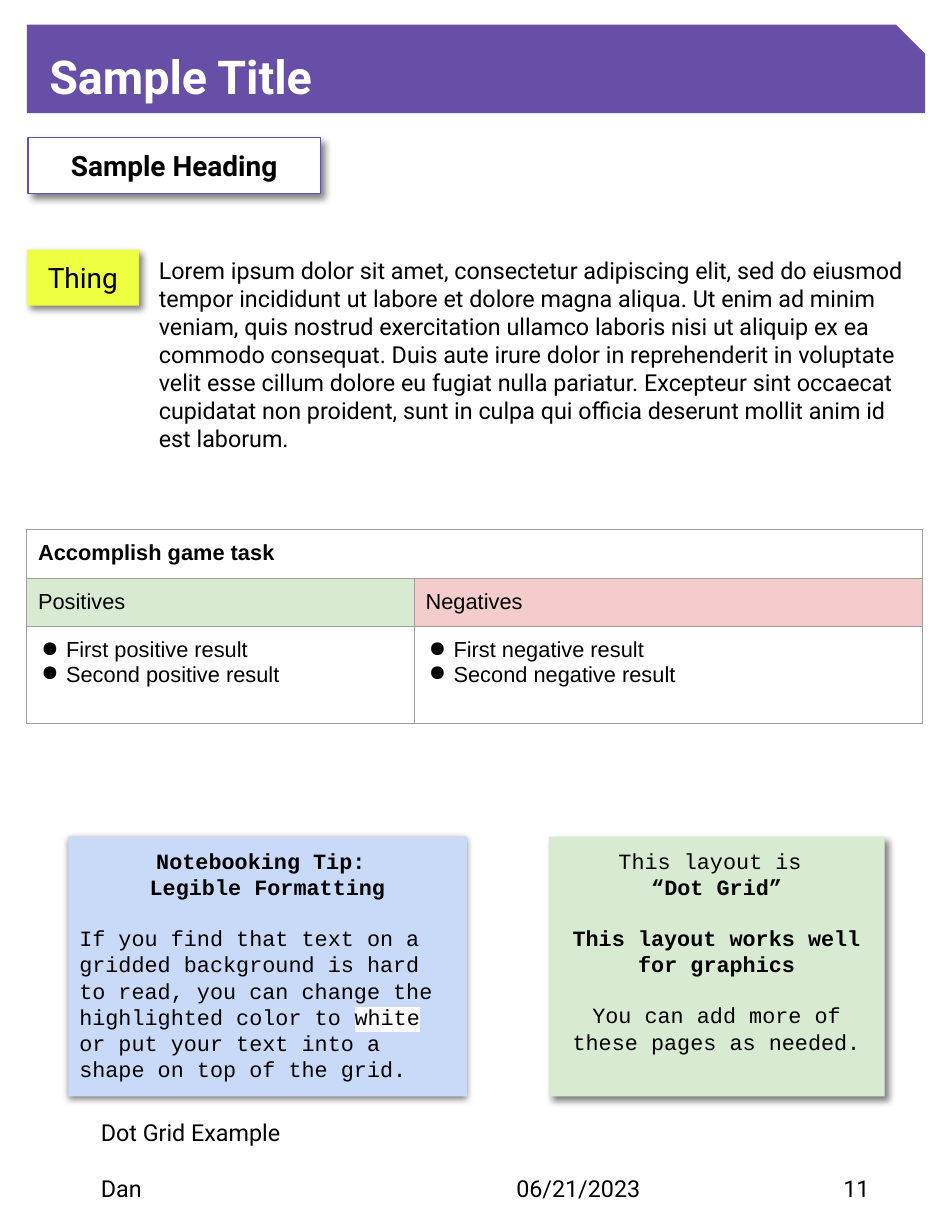
import pptx
import pptx.util
import pptx.dml.color
import pptx.enum.shapes
import pptx.enum.text
import pptx.oxml.ns
from lxml import etree

Inches, Pt = pptx.util.Inches, pptx.util.Pt
RGBColor = pptx.dml.color.RGBColor
SHAPE = pptx.enum.shapes.MSO_SHAPE
ALIGN = pptx.enum.text.PP_ALIGN
ANCHOR = pptx.enum.text.MSO_ANCHOR
qn = pptx.oxml.ns.qn

BLACK = RGBColor(0x00, 0x00, 0x00)
WHITE = RGBColor(0xFF, 0xFF, 0xFF)
PURPLE = RGBColor(0x67, 0x4E, 0xA7)
YELLOW = RGBColor(0xEE, 0xFF, 0x41)
GREEN = RGBColor(0xD9, 0xEA, 0xD3)
RED = RGBColor(0xF4, 0xCC, 0xCC)
BLUE = RGBColor(0xC9, 0xDA, 0xF8)
GRAY = RGBColor(0x9E, 0x9E, 0x9E)
LOREM = (
    "Lorem ipsum dolor sit amet, consectetur adipiscing elit, sed do eiusmod tempor "
    "incididunt ut labore et dolore magna aliqua. Ut enim ad minim veniam, quis nostrud "
    "exercitation ullamco laboris nisi ut aliquip ex ea commodo consequat. Duis aute irure "
    "dolor in reprehenderit in voluptate velit esse cillum dolore eu fugiat nulla pariatur. "
    "Excepteur sint occaecat cupidatat non proident, sunt in culpa qui officia deserunt "
    "mollit anim id est laborum."
)


def add_child(parent, tag, **attrs):
    return etree.SubElement(parent, qn(tag), {k: str(v) for k, v in attrs.items()})


def add_color(parent, color):
    add_child(parent, "a:srgbClr", val=color)


def add_run(p, text, font="Roboto", size=15, bold=False, color=BLACK, highlight=None):
    r = p.add_run()
    r.text = text
    r.font.size, r.font.bold, r.font.name = Pt(size), bold, font
    r.font.color.rgb = color
    if highlight is not None:
        mark = etree.Element(qn("a:highlight"))
        add_color(mark, highlight)
        r.font._element.find(qn("a:latin")).addprevious(mark)


class Page:
    """Holds the look of the page and draws each kind of element on it."""

    inset = 0.1
    bullet_indent, bullet_hang = 0.25, 0.22

    def __init__(self, slide):
        self.shapes = slide.shapes

    def fill_text(self, tf, paragraphs, insets, anchor=ANCHOR.TOP, **fmt):
        tf.word_wrap = True
        tf.vertical_anchor = anchor
        tf.margin_left, tf.margin_top, tf.margin_right, tf.margin_bottom = map(Inches, insets)
        for i, (runs, align, before) in enumerate(paragraphs):
            p = tf.add_paragraph() if i else tf.paragraphs[0]
            p.alignment = align
            if before:
                p.space_before = Pt(before)
            for text, extra in runs:
                add_run(p, text, **{**fmt, **extra})

    def text(self, box, text, inset=0, **fmt):
        sp = self.shapes.add_textbox(*map(Inches, box))
        self.fill_text(sp.text_frame, [([(text, {})], ALIGN.LEFT, 0)], [inset] * 4, **fmt)

    def shape(self, box, fill, paragraphs, kind=SHAPE.RECTANGLE, line=None, shadow=None,
              insets=(inset,) * 4, **fmt):
        sp = self.shapes.add_shape(kind, *map(Inches, box))
        sp.shadow.inherit = False
        sp.fill.solid()
        sp.fill.fore_color.rgb = fill
        if line is None:
            sp.line.fill.background()
        else:
            sp.line.color.rgb, sp.line.width = line, Pt(0.75)
        if shadow:
            self.cast_shadow(sp, *shadow)
        self.fill_text(sp.text_frame, paragraphs, insets, **fmt)
        return sp

    def cast_shadow(self, sp, distance, angle):
        effects = sp._element.spPr.find(qn("a:effectLst"))
        outer = add_child(effects, "a:outerShdw", blurRad=Pt(4.5), dist=Pt(distance),
                          dir=angle * 60000, algn="bl", rotWithShape=0)
        add_color(outer, BLACK)
        add_child(outer[0], "a:alpha", val=50000)

    def table(self, box, widths, heights, rows, fills):
        frame = self.shapes.add_table(len(rows), len(widths), *map(Inches, box))
        table = frame.table
        for col, width in zip(table.columns, widths):
            col.width = Inches(width)
        for row, height in zip(table.rows, heights):
            row.height = Inches(height)
        for i, row in enumerate(rows):
            for j, lines in enumerate(row):
                self.cell(table.cell(i, j), lines, fills[i][j], bold=i == 0, bulleted=i == 2)
        table.cell(0, 0).merge(table.cell(0, 1))

    def cell(self, cell, lines, fill, bold, bulleted):
        cell.margin_left = cell.margin_right = Inches(self.inset)
        cell.margin_top = cell.margin_bottom = Inches(self.inset)
        tcPr = cell._tc.get_or_add_tcPr()
        for side in ("a:lnL", "a:lnR", "a:lnT", "a:lnB"):
            add_color(add_child(add_child(tcPr, side, w=Pt(0.75)), "a:solidFill"), GRAY)
        cell.fill.solid()
        cell.fill.fore_color.rgb = fill
        for i, line in enumerate(lines):
            p = cell.text_frame.add_paragraph() if i else cell.text_frame.paragraphs[0]
            if bulleted:
                self.bullet(p)
            add_run(p, line, font="Arial", size=14, bold=bold)

    def bullet(self, p):
        pPr = p._p.get_or_add_pPr()
        pPr.set("marL", str(Inches(self.bullet_indent)))
        pPr.set("indent", str(-Inches(self.bullet_hang)))
        add_color(add_child(pPr, "a:buClr"), BLACK)
        add_child(pPr, "a:buChar", char="●")


def main():
    prs = pptx.Presentation()
    prs.slide_width, prs.slide_height = Inches(8.5), Inches(11)
    page = Page(prs.slides.add_slide(prs.slide_layouts[6]))
    bold = {"bold": True}
    down_right, down = (3.8, 46), (1.5, 90)
    gap = 16

    for left, width, text in ((0.9, 3.51, "Dan"), (4.61, 2.4, "06/21/2023"), (7.53, 0.74, "11")):
        page.text((left, 10.48, width, 0.23), text)
    page.text((0.9, 9.98, 7.34, 0.23), "Dot Grid Example")

    page.shape((4.9, 7.47, 3, 2.32), GREEN, [
        ([("This layout is ", {})], ALIGN.CENTER, 0),
        ([("“Dot Grid”", bold)], ALIGN.CENTER, 0),
        ([("This layout works well for graphics", bold)], ALIGN.CENTER, gap),
        ([("You can add more of these pages as needed.", {})], ALIGN.CENTER, gap),
    ], shadow=down_right, font="Courier New", size=14)

    title = page.shape((0.24, 0.22, 8.02, 0.79), PURPLE,
                       [([("Sample Title", bold)], ALIGN.LEFT, 0)],
                       kind=SHAPE.SNIP_1_RECTANGLE, insets=(0.2, 0, 0.1, 0),
                       anchor=ANCHOR.MIDDLE, size=30, color=WHITE)
    title.adjustments[0] = 0.33
    page.shape((0.24, 2.23, 1, 0.5), YELLOW, [([("Thing", {})], ALIGN.CENTER, 0)],
               shadow=down_right, anchor=ANCHOR.MIDDLE, size=18)
    page.shape((0.25, 1.23, 2.61, 0.5), WHITE, [([("Sample Heading", bold)], ALIGN.CENTER, 0)],
               line=PURPLE, shadow=down_right, anchor=ANCHOR.MIDDLE, size=18)

    page.table((0.24, 4.73, 8, 1.7), (3.46, 4.54), (0.42, 0.42, 0.86), [
        (["Accomplish game task"], []),
        (["Positives"], ["Negatives"]),
        (["First positive result", "Second positive result"],
         ["First negative result", "Second negative result"]),
    ], [(WHITE, WHITE), (GREEN, RED), (WHITE, WHITE)])

    page.text((1.32, 2.19, 6.93, 1.97), LOREM, inset=0.1, highlight=WHITE)

    page.shape((0.61, 7.47, 3.56, 2.32), BLUE, [
        ([("Notebooking Tip: ", bold)], ALIGN.CENTER, 0),
        ([("Legible Formatting", bold)], ALIGN.CENTER, 0),
        ([("If you find that text on a gridded background is hard to read, "
           "you can change the highlighted color to ", {}),
          ("white", {"highlight": WHITE}),
          (" or put your text into a shape on top of the grid.", {})], ALIGN.LEFT, gap),
    ], shadow=down, font="Courier New", size=14)

    prs.save("out.pptx")


if __name__ == "__main__":
    main()
